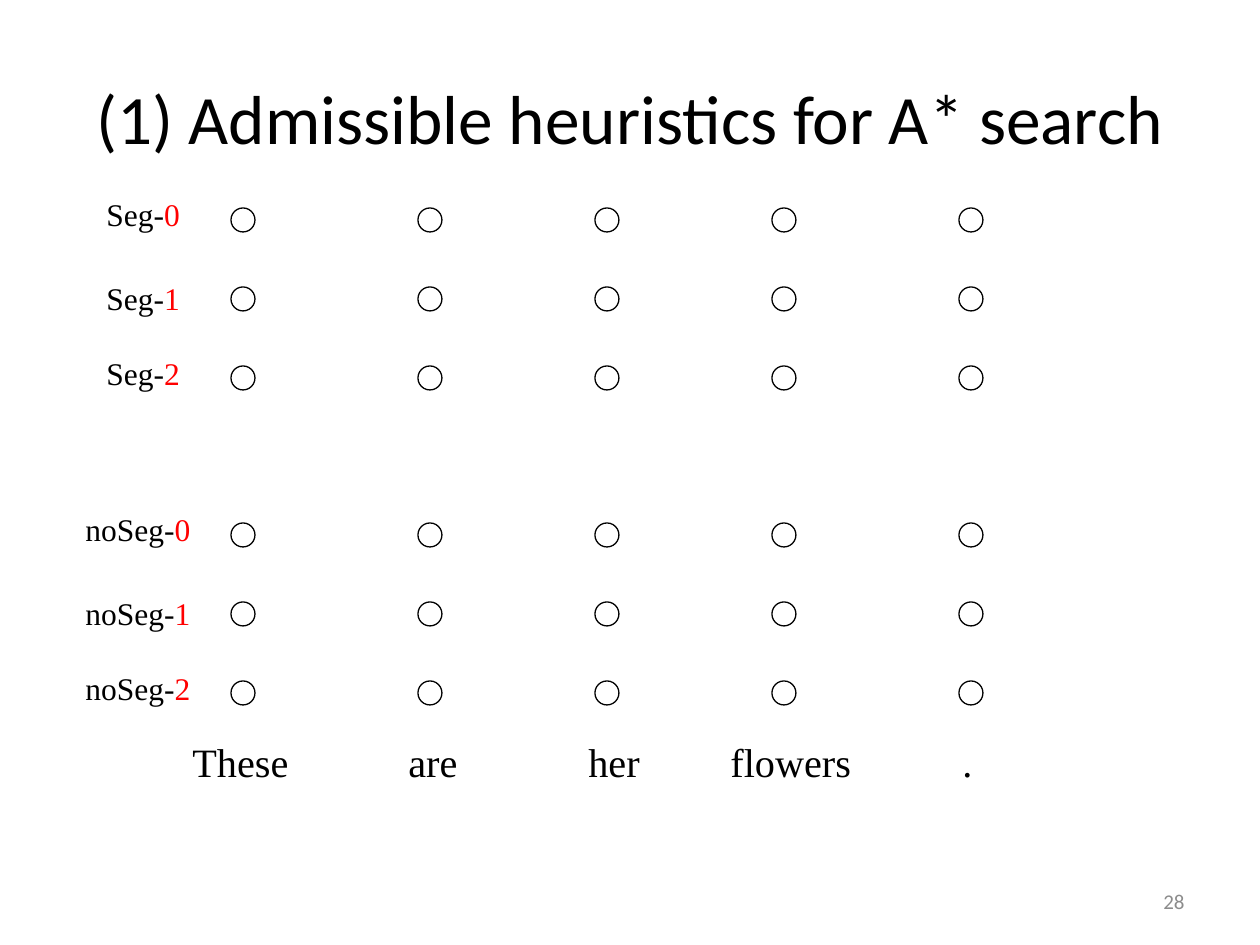
from dataclasses import dataclass

from lxml import etree
from pptx import Presentation
from pptx import util as u
from pptx.dml.color import RGBColor
from pptx.enum import shapes, text
from pptx.oxml.ns import qn

PX = u.Inches(1) // 126


@dataclass(frozen=True)
class Theme:
    ink = RGBColor(0x00, 0x00, 0x00)
    paper = RGBColor(0xFF, 0xFF, 0xFF)
    accent = RGBColor(0xFF, 0x00, 0x00)
    muted = RGBColor(0x8C, 0x8C, 0x8C)
    sans = "Calibri"
    serif = "Times New Roman"
    title_size = 39.6
    word_size = 23
    label_size = 18
    number_size = 12


theme = Theme()
deck = Presentation()
deck.slide_width, deck.slide_height = 1260 * PX, 945 * PX
page = deck.slides.add_slide(deck.slide_layouts[6])


def add_text(bounds, spans, size, font, align=text.PP_ALIGN.LEFT,
             anchor=text.MSO_ANCHOR.TOP):
    """Add a one-paragraph box from (wording, colour) spans; return the paragraph."""
    box = page.shapes.add_textbox(*(n * PX for n in bounds))
    frame = box.text_frame
    frame.word_wrap = True
    frame.vertical_anchor = anchor
    para = frame.paragraphs[0]
    para.alignment = align
    para.font.size = u.Pt(size)
    para.font.name = font
    for wording, colour in spans:
        span = para.add_run()
        span.text = wording
        span.font.color.rgb = colour
    return para


# State lattice: one column per token, three rows per group
column_lefts = [231, 418, 595, 772, 959]
label_tops = [189, 273, 348]
node_top, node_step, node_size = 208, 79, 24
groups = [("Seg-", 94, 105, 0), ("noSeg-", 73, 136, 315)]

for name, label_left, label_width, drop in groups:
    for row, label_top in enumerate(label_tops):
        for left in column_lefts:
            top = node_top + drop + row * node_step
            node = page.shapes.add_shape(
                shapes.MSO_SHAPE.OVAL, left * PX, top * PX,
                node_size * PX, node_size * PX)
            node.shadow.inherit = False
            node.fill.solid()
            node.fill.fore_color.rgb = theme.paper
            node.line.color.rgb = theme.ink
            node.line.width = u.Pt(0.75)
        add_text((label_left, label_top + drop, label_width, 50),
                 [(name, theme.ink), (str(row), theme.accent)],
                 theme.label_size, theme.serif)

# Sentence under the lattice, each token at its own tab stop
token_stops = {"These": 107, "are": 323, "her": 503, "flowers": 645, ".": 877}
sentence = add_text((73, 731, 987, 65),
                    [("\t" + "\t".join(token_stops), theme.ink)],
                    theme.word_size, theme.serif)
tabs = etree.SubElement(sentence._p.get_or_add_pPr(), qn("a:tabLst"))
sentence._p.pPr.insert(0, tabs)  # tab stops precede the default run properties
for stop in token_stops.values():
    etree.SubElement(tabs, qn("a:tab"), pos=str(stop * PX), algn="l")

add_text((63, 38, 1134, 157), [("(1) Admissible heuristics for A* search", theme.ink)],
         theme.title_size, theme.sans, text.PP_ALIGN.CENTER, text.MSO_ANCHOR.MIDDLE)
add_text((903, 876, 294, 50), [("28", theme.muted)],
         theme.number_size, theme.sans, text.PP_ALIGN.RIGHT, text.MSO_ANCHOR.MIDDLE)

deck.save("out.pptx")
